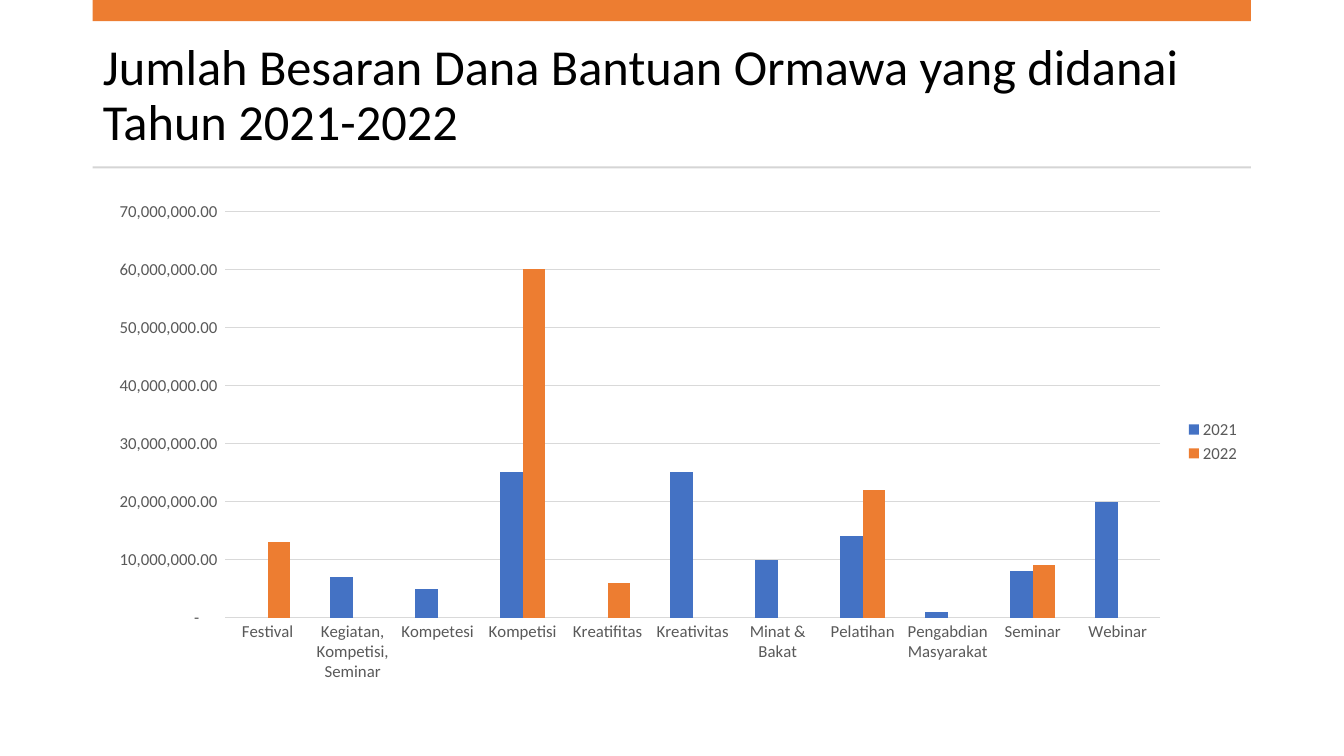
from dataclasses import dataclass

from pptx import Presentation
from pptx.chart.chart import Chart
from pptx.chart.data import CategoryChartData
from pptx.dml.color import RGBColor
from pptx.enum.chart import XL_CHART_TYPE, XL_LEGEND_POSITION, XL_TICK_MARK
from pptx.enum.shapes import MSO_SHAPE
from pptx.enum.text import MSO_ANCHOR, MSO_AUTO_SIZE, PP_ALIGN
from pptx.slide import Slide
from pptx.text.text import Font
from pptx.util import Inches, Pt


@dataclass(frozen=True)
class Theme:
    font: str = "Calibri"
    title_size: int = 36
    chart_size: int = 12
    black: str = "000000"
    label: str = "595959"
    grid: str = "D9D9D9"
    rule: str = "D5D5D5"
    blue: str = "4472C4"
    orange: str = "ED7D31"


@dataclass(frozen=True)
class Bar:
    top: float
    height: float
    color: str


@dataclass(frozen=True)
class YearFunding:
    year: str
    color: str
    millions: dict[str, int]


THEME = Theme()
SLIDE_HEIGHT = 7.5
SLIDE_WIDTH = SLIDE_HEIGHT * 16 / 9
LEFT, WIDTH = 0.92, 11.49
MILLION = 1_000_000
TITLE = "Jumlah Besaran Dana Bantuan Ormawa yang didanai Tahun 2021-2022"
NUMBER_FORMAT = '_(* #,##0.00_);_(* \\(#,##0.00\\);_(* "-"??_);_(@_)'

BARS = [Bar(0, 0.21, THEME.orange), Bar(1.65, 0.02, THEME.rule)]

CATEGORIES = [
    "Festival", "Kegiatan, Kompetisi, Seminar", "Kompetesi", "Kompetisi",
    "Kreatifitas", "Kreativitas", "Minat & Bakat", "Pelatihan",
    "Pengabdian Masyarakat ", "Seminar", "Webinar",
]

FUNDING = [
    YearFunding("2021", THEME.blue, {
        "Kegiatan, Kompetisi, Seminar": 7, "Kompetesi": 5, "Kompetisi": 25,
        "Kreativitas": 25, "Minat & Bakat": 10, "Pelatihan": 14,
        "Pengabdian Masyarakat ": 1, "Seminar": 8, "Webinar": 20,
    }),
    YearFunding("2022", THEME.orange, {
        "Festival": 13, "Kompetisi": 60, "Kreatifitas": 6,
        "Pelatihan": 22, "Seminar": 9,
    }),
]


def set_attributes(target: object, values: dict[str, object]) -> None:
    for name, value in values.items():
        setattr(target, name, value)


def format_font(font: Font, size: int, color: str) -> None:
    set_attributes(font, {"name": THEME.font, "size": Pt(size), "bold": False})
    font.color.rgb = RGBColor.from_string(color)


def add_title(slide: Slide) -> None:
    title = slide.shapes.title
    set_attributes(title, {
        "left": Inches(LEFT), "top": Inches(0.37),
        "width": Inches(WIDTH), "height": Inches(1.18),
    })
    frame = title.text_frame
    frame.text = TITLE
    set_attributes(frame, {
        "word_wrap": True,
        "auto_size": MSO_AUTO_SIZE.NONE,
        "vertical_anchor": MSO_ANCHOR.MIDDLE,
    })
    paragraph = frame.paragraphs[0]
    set_attributes(paragraph, {
        "alignment": PP_ALIGN.LEFT, "line_spacing": 0.9, "space_before": Pt(0),
    })
    format_font(paragraph.runs[0].font, THEME.title_size, THEME.black)


def add_bar(slide: Slide, bar: Bar) -> None:
    shape = slide.shapes.add_shape(
        MSO_SHAPE.RECTANGLE, Inches(LEFT), Inches(bar.top), Inches(WIDTH), Inches(bar.height)
    )
    shape.shadow.inherit = False
    shape.fill.solid()
    shape.fill.fore_color.rgb = RGBColor.from_string(bar.color)
    shape.line.fill.background()


def format_axes(chart: Chart) -> None:
    category_axis, value_axis = chart.category_axis, chart.value_axis
    for axis in (category_axis, value_axis):
        set_attributes(axis, {
            "major_tick_mark": XL_TICK_MARK.NONE,
            "minor_tick_mark": XL_TICK_MARK.NONE,
        })
        format_font(axis.tick_labels.font, THEME.chart_size, THEME.label)
    set_attributes(value_axis, {
        "minimum_scale": 0,
        "maximum_scale": 70 * MILLION,
        "major_unit": 10 * MILLION,
        "has_major_gridlines": True,
    })
    set_attributes(value_axis.tick_labels, {
        "number_format": NUMBER_FORMAT, "number_format_is_linked": False,
    })
    value_axis.format.line.fill.background()
    for line in (category_axis.format.line, value_axis.major_gridlines.format.line):
        line.color.rgb = RGBColor.from_string(THEME.grid)
        line.width = Pt(0.75)


def add_funding_chart(slide: Slide) -> None:
    data = CategoryChartData(number_format=NUMBER_FORMAT)
    data.categories = CATEGORIES
    for funding in FUNDING:
        amounts = [
            funding.millions[name] * MILLION if name in funding.millions else None
            for name in CATEGORIES
        ]
        data.add_series(funding.year, amounts)

    chart = slide.shapes.add_chart(
        XL_CHART_TYPE.COLUMN_CLUSTERED,
        Inches(LEFT), Inches(1.9), Inches(WIDTH), Inches(4.96), data,
    ).chart
    set_attributes(chart, {"has_title": False, "has_legend": True})
    format_font(chart.font, THEME.chart_size, THEME.black)
    set_attributes(chart.legend, {
        "position": XL_LEGEND_POSITION.RIGHT, "include_in_layout": False,
    })
    format_font(chart.legend.font, THEME.chart_size, THEME.label)
    format_axes(chart)

    plot = chart.plots[0]
    set_attributes(plot, {"gap_width": 182, "overlap": 0, "vary_by_categories": False})
    for series, funding in zip(plot.series, FUNDING):
        series.invert_if_negative = False
        series.format.fill.solid()
        series.format.fill.fore_color.rgb = RGBColor.from_string(funding.color)


def main() -> None:
    presentation = Presentation()
    set_attributes(presentation, {
        "slide_width": Inches(SLIDE_WIDTH), "slide_height": Inches(SLIDE_HEIGHT),
    })
    title_only = presentation.slide_layouts.get_by_name("Title Only")
    slide = presentation.slides.add_slide(title_only)
    add_title(slide)
    for bar in BARS:
        add_bar(slide, bar)
    add_funding_chart(slide)
    presentation.save("out.pptx")


if __name__ == "__main__":
    main()
